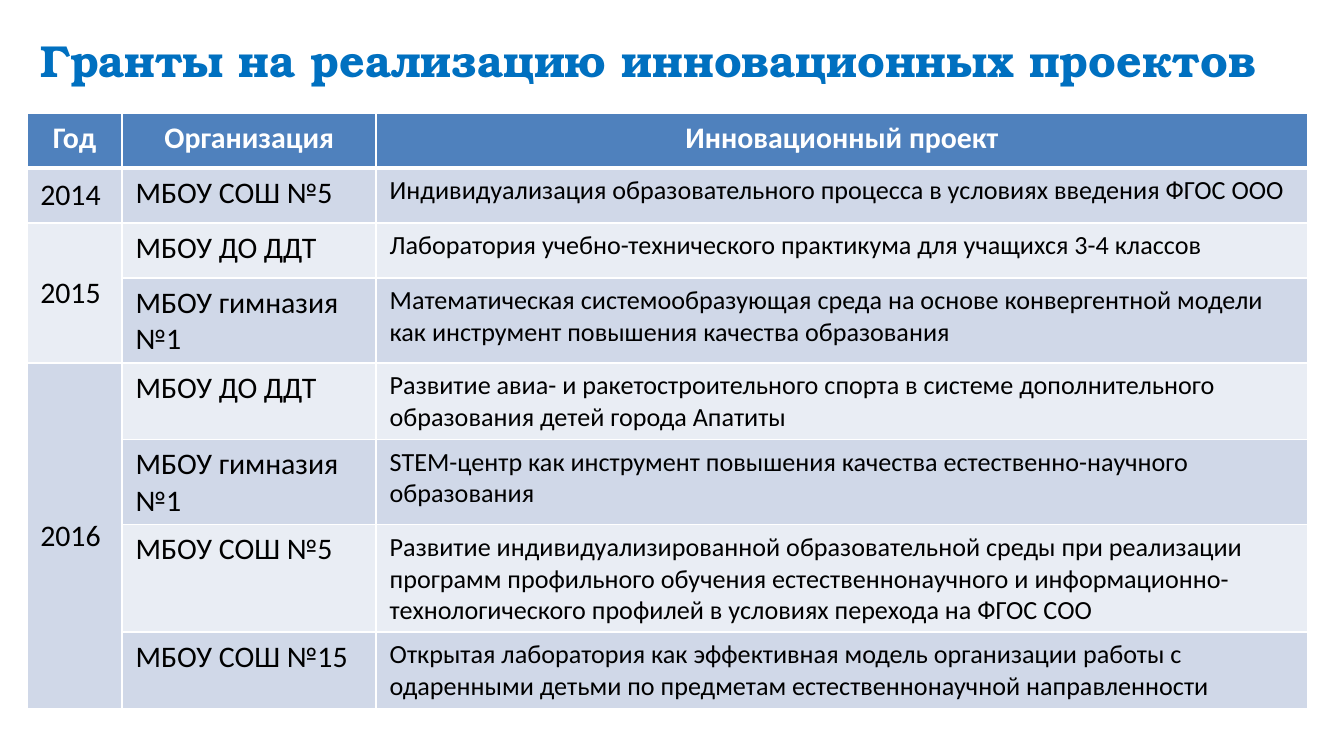
from lxml import etree
from pptx import Presentation
from pptx.dml.color import RGBColor
from pptx.enum.text import MSO_ANCHOR as Anchor, PP_ALIGN as Align
from pptx.oxml.ns import qn
from pptx.util import Inches, Pt

WHITE = RGBColor(0xFF, 0xFF, 0xFF)
BLACK = RGBColor(0, 0, 0)
TITLE_BLUE = RGBColor(0x00, 0x70, 0xC0)
HEADER_BLUE = RGBColor(0x4F, 0x81, 0xBD)
BANDS = (RGBColor(0xD0, 0xD8, 0xE8), RGBColor(0xE9, 0xED, 0xF4))

TITLE = "Гранты на реализацию инновационных проектов"
HEADINGS = ("Год", "Организация", "Инновационный проект")
HEADER_BORDERS = {"a:lnL": 1, "a:lnR": 1, "a:lnT": 1, "a:lnB": 3}
COLUMN_WIDTHS = (0.71, 1.89, 6.93)
ROW_HEIGHT = 0.41
GRANTS = {
    "2014": [
        ("МБОУ СОШ №5", "Индивидуализация образовательного процесса в условиях введения ФГОС ООО"),
    ],
    "2015": [
        ("МБОУ ДО ДДТ", "Лаборатория учебно-технического практикума для учащихся 3-4 классов"),
        ("МБОУ гимназия №1", "Математическая системообразующая среда на основе конвергентной модели "
         "как инструмент повышения качества образования"),
    ],
    "2016": [
        ("МБОУ ДО ДДТ", "Развитие авиа- и ракетостроительного спорта в системе дополнительного "
         "образования детей города Апатиты"),
        ("МБОУ гимназия №1", "STEM-центр как инструмент повышения качества естественно-научного "
         "образования"),
        ("МБОУ СОШ №5", "Развитие индивидуализированной образовательной среды при реализации "
         "программ профильного обучения естественнонаучного и "
         "информационно-технологического профилей в условиях перехода на ФГОС СОО"),
        ("МБОУ СОШ №15", "Открытая лаборатория как эффективная модель организации работы с "
         "одаренными детьми по предметам естественнонаучной направленности"),
    ],
}


def write(frame, text, size, color, bold=False, font="Calibri", align=Align.LEFT):
    para = frame.paragraphs[0]
    para.text = text
    para.alignment = align
    para.font.name = font
    para.font.size = Pt(size)
    para.font.bold = bold
    para.font.color.rgb = color


def fill_cell(cell, color):
    cell.fill.solid()
    cell.fill.fore_color.rgb = color


def add_borders(cell, widths, color):
    """Border lines must come before the fill in the cell properties."""
    properties = cell._tc.get_or_add_tcPr()
    for position, (tag, width) in enumerate(widths.items()):
        line = etree.Element(qn(tag), w=str(Pt(width)))
        solid = etree.SubElement(line, qn("a:solidFill"))
        etree.SubElement(solid, qn("a:srgbClr"), val=str(color))
        properties.insert(position, line)


def add_title(page, left, top, width, height):
    box = page.shapes.add_textbox(Inches(left), Inches(top), Inches(width), Inches(height))
    frame = box.text_frame
    frame.word_wrap = True
    frame.vertical_anchor = Anchor.MIDDLE
    write(frame, TITLE, 24, TITLE_BLUE, bold=True, font="TeX Gyre Bonum")


def add_grants_table(page, left, top, width, height):
    """Rows start equal and grow with their text; each year spans its grants."""
    row_count = 1 + sum(len(grants) for grants in GRANTS.values())
    holder = page.shapes.add_table(
        row_count, len(HEADINGS), Inches(left), Inches(top), Inches(width), Inches(height))
    table = holder.table
    for column, share in zip(table.columns, COLUMN_WIDTHS):
        column.width = Inches(width * share / sum(COLUMN_WIDTHS))
    for row in table.rows:
        row.height = Inches(ROW_HEIGHT)
    holder.height = Inches(height)

    for cell, heading in zip(table.rows[0].cells, HEADINGS):
        fill_cell(cell, HEADER_BLUE)
        add_borders(cell, HEADER_BORDERS, WHITE)
        write(cell.text_frame, heading, 16, WHITE, bold=True, align=Align.CENTER)

    row = 1
    for year_index, (year, grants) in enumerate(GRANTS.items()):
        year_cell = table.cell(row, 0)
        if len(grants) > 1:
            year_cell.merge(table.cell(row + len(grants) - 1, 0))
        year_cell.vertical_anchor = Anchor.MIDDLE
        fill_cell(year_cell, BANDS[year_index % 2])
        write(year_cell.text_frame, year, 16, BLACK)
        for organization, project in grants:
            for column, text, size in ((1, organization, 16), (2, project, 14)):
                cell = table.cell(row, column)
                fill_cell(cell, BANDS[(row - 1) % 2])
                write(cell.text_frame, text, size, BLACK)
            row += 1


def main():
    deck = Presentation()
    deck.slide_width = Inches(10)
    deck.slide_height = Inches(10 * 9 / 16)
    page = deck.slides.add_slide(deck.slide_layouts[6])
    add_title(page, 0.2, 0.14, 9.8, 0.6)
    add_grants_table(page, 0.2, 0.84, 9.53, 4.42)
    deck.save("out.pptx")


if __name__ == "__main__":
    main()
